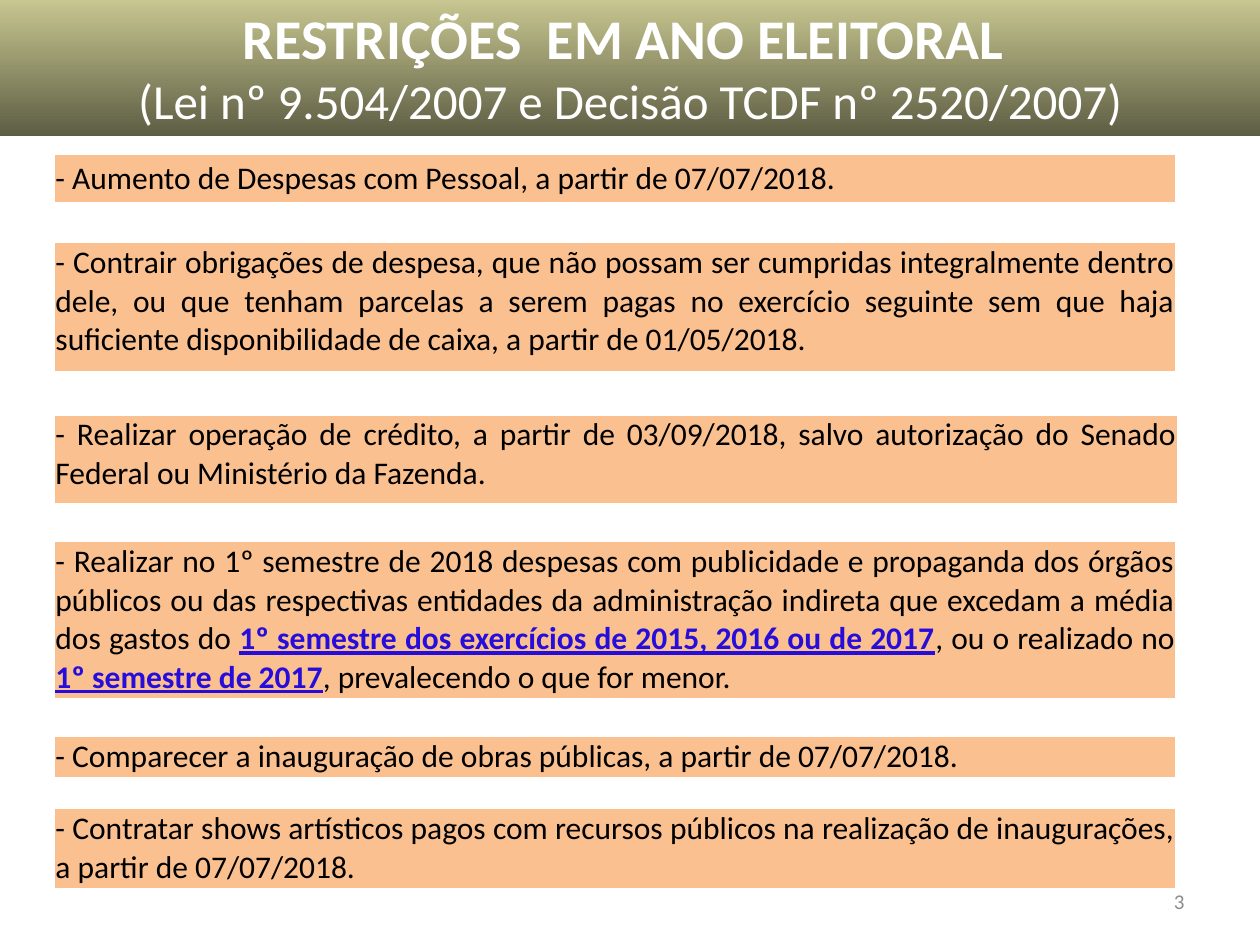
from lxml import etree
from pptx import Presentation
from pptx.dml.color import RGBColor
from pptx.enum.text import MSO_ANCHOR, MSO_AUTO_SIZE, PP_ALIGN
from pptx.oxml.ns import qn
from pptx.util import Pt

CENTER, RIGHT, JUSTIFY = PP_ALIGN.CENTER, PP_ALIGN.RIGHT, PP_ALIGN.JUSTIFY
TOP, MIDDLE = MSO_ANCHOR.TOP, MSO_ANCHOR.MIDDLE
NO_AUTOFIT = MSO_AUTO_SIZE.NONE

WHITE = RGBColor(0xFF, 0xFF, 0xFF)
BLACK = RGBColor(0x00, 0x00, 0x00)
GRAY = RGBColor(0x8C, 0x8C, 0x8C)
BLUE = RGBColor(0x26, 0x0D, 0xDB)
ORANGE = RGBColor(0xFA, 0xC0, 0x90)
OLIVE_LIGHT = RGBColor(0xCA, 0xC9, 0x92)
OLIVE_DARK = RGBColor(0x5D, 0x5D, 0x44)

LEFT, WIDTH = 31, 641

# Each restriction: top, height, width, anchor, spans of (text, emphasized)
RESTRICTIONS = [
    (88, 28, WIDTH, MIDDLE, [
        ("- Aumento de Despesas com Pessoal, a partir de 07/07/2018.", False)]),
    (138.5, 74, WIDTH, TOP, [
        ("- Contrair obrigações de despesa, que não possam ser cumpridas "
         "integralmente dentro dele, ou que tenham parcelas a serem pagas no "
         "exercício seguinte sem que haja suficiente disponibilidade de caixa, "
         "a partir de 01/05/2018.", False)]),
    (237, 51, WIDTH + 1, TOP, [
        ("- Realizar operação de crédito, a partir de 03/09/2018, salvo "
         "autorização do Senado Federal ou Ministério da Fazenda.", False)]),
    (309.5, 90, WIDTH, TOP, [
        ("- Realizar no 1º semestre de 2018 despesas com publicidade e propaganda "
         "dos órgãos públicos ou das respectivas entidades da administração "
         "indireta que excedam a média dos gastos do ", False),
        ("1º semestre dos exercícios de 2015, 2016 ou de 2017", True),
        (", ou o realizado no ", False),
        ("1º semestre de 2017", True),
        (", prevalecendo o que for menor.", False)]),
    (421, 23.5, WIDTH, TOP, [
        ("- Comparecer a inauguração de obras públicas, a partir de 07/07/2018. ",
         False)]),
    (462, 46, WIDTH, TOP, [
        ("- Contratar shows artísticos pagos com recursos públicos na realização "
         "de inaugurações, a partir de 07/07/2018.", False)]),
]


def add_span(para, text, size=18, color=BLACK, bold=False, underline=False,
             font="Calibri"):
    span = para.add_run()
    span.text = text
    span.font.name = font
    span.font.size = Pt(size)
    span.font.color.rgb = color
    span.font.bold = bold
    span.font.underline = underline


def set_borders(cell, color, width):
    properties = cell._tc.get_or_add_tcPr()
    for index, side in enumerate(("lnL", "lnR", "lnT", "lnB")):
        line = etree.Element(qn(f"a:{side}"), w=str(Pt(width)))
        fill = etree.SubElement(line, qn("a:solidFill"))
        etree.SubElement(fill, qn("a:srgbClr"), val=str(color))
        properties.insert(index, line)


class SlideBuilder:
    def __init__(self, slide, font="Calibri"):
        self.slide = slide
        self.font = font

    def title(self, left, top, width, height, lines):
        box = self.slide.shapes.title
        box.left, box.top, box.width, box.height = map(Pt, (left, top, width, height))
        box.fill.gradient()
        box.fill.gradient_angle = 270
        for stop, color in zip(box.fill.gradient_stops, (OLIVE_LIGHT, OLIVE_DARK)):
            stop.color.rgb = color
        frame = box.text_frame
        frame.auto_size = NO_AUTOFIT
        frame.word_wrap = True
        frame.vertical_anchor = MIDDLE
        for index, (text, size, bold) in enumerate(lines):
            para = frame.add_paragraph() if index else frame.paragraphs[0]
            para.alignment = CENTER
            para.space_before = Pt(0)
            add_span(para, text, size=size, color=WHITE, bold=bold, font=self.font)

    def restriction(self, left, top, width, height, anchor, spans):
        table = self.slide.shapes.add_table(
            1, 1, Pt(left), Pt(top), Pt(width), Pt(height)).table
        table.first_row = table.horz_banding = False
        cell = table.cell(0, 0)
        cell.margin_left = cell.margin_right = cell.margin_top = Pt(0.7)
        cell.margin_bottom = Pt(0)
        cell.vertical_anchor = anchor
        cell.fill.solid()
        cell.fill.fore_color.rgb = ORANGE
        set_borders(cell, WHITE, 1)
        para = cell.text_frame.paragraphs[0]
        para.alignment = JUSTIFY
        for text, emphasized in spans:
            add_span(para, text, color=BLUE if emphasized else BLACK,
                     bold=emphasized, underline=emphasized, font=self.font)

    def page_number(self, left, top, width, height, text):
        box = self.slide.shapes.add_textbox(Pt(left), Pt(top), Pt(width), Pt(height))
        frame = box.text_frame
        frame.word_wrap = True
        frame.vertical_anchor = MIDDLE
        para = frame.paragraphs[0]
        para.alignment = RIGHT
        add_span(para, text, size=12, color=GRAY, font=self.font)


def main():
    deck = Presentation()
    deck.slide_width, deck.slide_height = Pt(720), Pt(540)
    page = SlideBuilder(deck.slides.add_slide(deck.slide_layouts[5]))

    # Page number
    page.page_number(516, 500.5, 168, 28.75, "3")

    # Title band
    page.title(0, -2, 720, 80, [
        ("RESTRIÇÕES  EM ANO ELEITORAL ", 32, True),
        ("(Lei nº 9.504/2007 e Decisão TCDF nº 2520/2007)", 28, False),
    ])

    # Restrictions
    for top, height, width, anchor, spans in RESTRICTIONS:
        page.restriction(LEFT, top, width, height, anchor, spans)

    deck.save("out.pptx")


if __name__ == "__main__":
    main()
